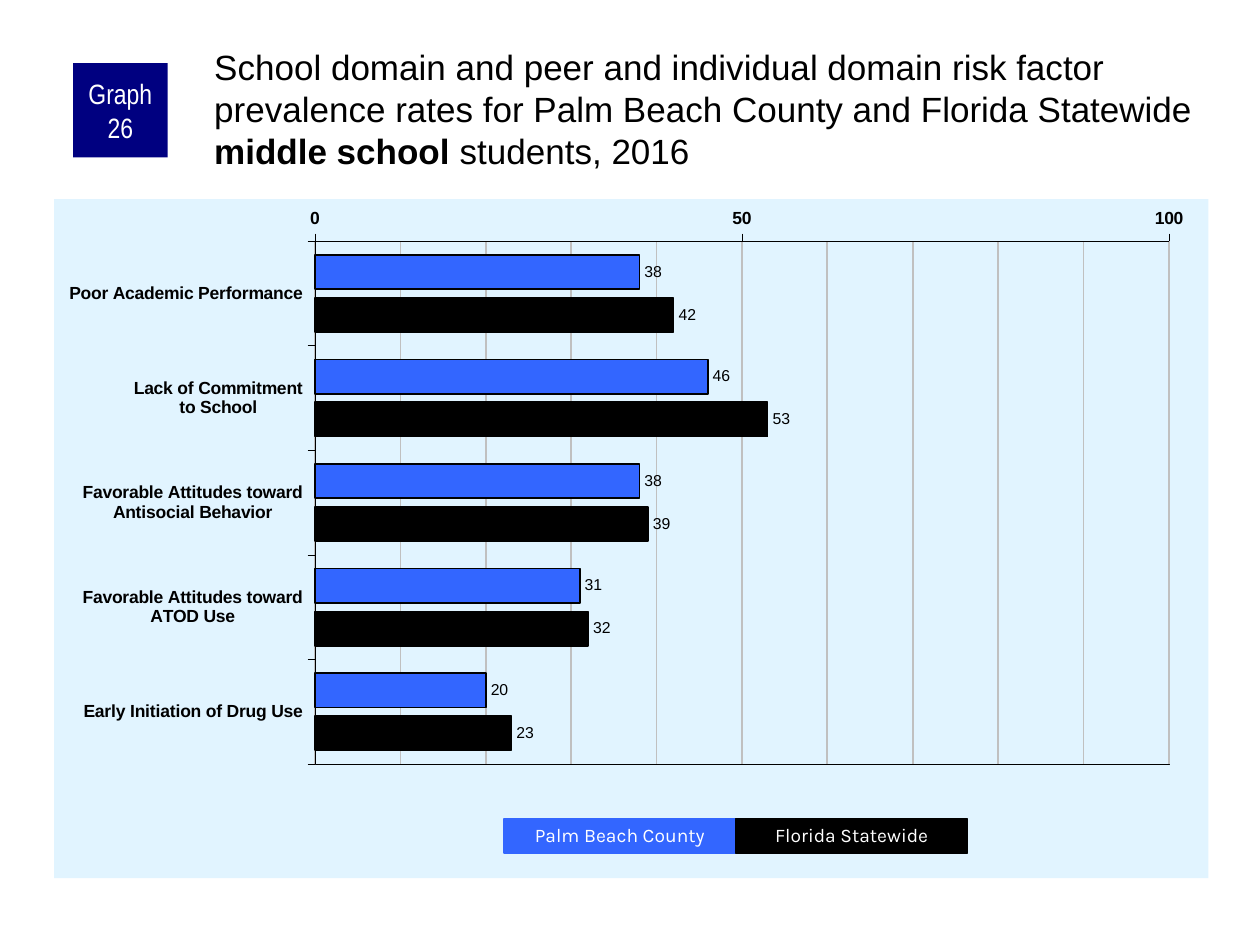
from copy import deepcopy

from lxml.etree import SubElement, fromstring
from pptx import Presentation
from pptx.chart.data import CategoryChartData
from pptx.dml.color import RGBColor
from pptx.enum.chart import XL_AXIS_CROSSES, XL_CHART_TYPE, XL_LABEL_POSITION, XL_TICK_MARK
from pptx.enum.shapes import MSO_SHAPE
from pptx.enum.text import MSO_ANCHOR, MSO_AUTO_SIZE, PP_ALIGN
from pptx.oxml.ns import nsdecls, qn
from pptx.util import Inches, Pt

BLACK = RGBColor(0x00, 0x00, 0x00)
WHITE = RGBColor(0xFF, 0xFF, 0xFF)
NAVY = RGBColor(0x00, 0x00, 0x80)
BLUE = RGBColor(0x33, 0x66, 0xFF)
PALE = RGBColor(0xE1, 0xF4, 0xFF)
GRAY = RGBColor(0xC0, 0xC0, 0xC0)

RATES = [
    ("Poor Academic Performance", 38, 42),
    ("Lack of Commitment\nto School", 46, 53),
    ("Favorable Attitudes toward\nAntisocial Behavior", 38, 39),
    ("Favorable Attitudes toward\nATOD Use", 31, 32),
    ("Early Initiation of Drug Use", 20, 23),
]
GROUPS = [("Palm Beach County", BLUE), ("Florida Statewide", BLACK)]


def style(font, size, color=BLACK, bold=False, name="Arial"):
    font.size, font.bold, font.name = Pt(size), bold, name
    font.color.rgb = color


def write(frame, text, align=PP_ALIGN.LEFT, space=None, bold="", **form):
    """Fill a frame with text; the part given as bold is set in bold."""
    para = frame.paragraphs[0]
    para.alignment = align
    if space:
        para.line_spacing = space
    head, mid, tail = text.partition(bold) if bold else (text, "", "")
    for part, heavy in ((head, False), (mid, True), (tail, False)):
        if part:
            run = para.add_run()
            run.text = part
            style(run.font, bold=heavy, **form)


def margins(frame, left, top, right, bottom):
    frame.margin_left, frame.margin_top = Inches(left), Inches(top)
    frame.margin_right, frame.margin_bottom = Inches(right), Inches(bottom)


def stroke(line, color, width):
    line.color.rgb = color
    line.width = Pt(width)


class Deck:
    def __init__(self):
        self.prs = Presentation()
        self.prs.slide_width, self.prs.slide_height = Inches(10), Inches(7.5)
        self.slide = self.prs.slides.add_slide(self.prs.slide_layouts[5])

    def title(self, text, x, y, w, h, **form):
        box = self.slide.shapes.title
        box.left, box.top, box.width, box.height = map(Inches, (x, y, w, h))
        frame = box.text_frame
        frame.word_wrap = True
        frame.auto_size = MSO_AUTO_SIZE.NONE
        frame.vertical_anchor = MSO_ANCHOR.TOP
        margins(frame, 0.03, 0.03, 0, 0)
        write(frame, text, **form)

    def block(self, text, x, y, w, h, fill, pad, edge=None, **form):
        box = self.slide.shapes.add_shape(MSO_SHAPE.RECTANGLE, *map(Inches, (x, y, w, h)))
        box.shadow.inherit = False
        box.fill.solid()
        box.fill.fore_color.rgb = fill
        if edge:
            stroke(box.line, fill, edge)
        else:
            box.line.fill.background()
        frame = box.text_frame
        frame.word_wrap = True
        frame.vertical_anchor = MSO_ANCHOR.MIDDLE
        margins(frame, *pad)
        write(frame, text, align=PP_ALIGN.CENTER, color=WHITE, **form)

    def bars(self, x, y, w, h):
        data = CategoryChartData()
        names, *series = zip(*RATES)
        data.categories = names
        for num, vals in enumerate(series, 1):
            data.add_series(f"Series {num}", vals)
        chart = self.slide.shapes.add_chart(
            XL_CHART_TYPE.BAR_CLUSTERED, *map(Inches, (x, y, w, h)), data).chart
        chart.has_legend = chart.has_title = False
        style(chart.font, 11.8)

        # Bars and their values
        plot = chart.plots[0]
        plot.gap_width, plot.overlap = 80, -25
        plot.vary_by_categories = False
        for bar, (_, color) in zip(plot.series, GROUPS):
            bar.format.fill.solid()
            bar.format.fill.fore_color.rgb = color
            stroke(bar.format.line, BLACK, 1)
            tags = bar.data_labels
            tags.show_value = True
            tags.position = XL_LABEL_POSITION.OUTSIDE_END
            style(tags.font, 9)

        # Axes, with a grid line at every ten
        cat, val = chart.category_axis, chart.value_axis
        for axis in (cat, val):
            axis.major_tick_mark = XL_TICK_MARK.OUTSIDE
            axis.minor_tick_mark = XL_TICK_MARK.NONE
            style(axis.tick_labels.font, 10, bold=True)
            stroke(axis.format.line, BLACK, 0.25)
        cat.reverse_order = True
        cat.crosses = XL_AXIS_CROSSES.MAXIMUM
        val.minimum_scale, val.maximum_scale, val.major_unit = 0, 100, 50
        val.minor_unit = 10
        val.has_major_gridlines = val.has_minor_gridlines = True
        stroke(val.major_gridlines.format.line, GRAY, 1)
        self.frame(chart)

    def frame(self, chart):
        """Place the plot, outline it, match the grids and colour the ground."""
        space = chart.element
        area = space.find(f"{qn('c:chart')}/{qn('c:plotArea')}")
        axis = area.find(qn("c:valAx"))
        look = axis.find(f"{qn('c:majorGridlines')}/{qn('c:spPr')}")
        axis.find(qn("c:minorGridlines")).append(deepcopy(look))
        old = area.find(qn("c:layout"))
        if old is not None:
            area.remove(old)
        layout = fromstring(f"<c:layout {nsdecls('c')}/>")
        area.insert(0, layout)
        spot = SubElement(layout, qn("c:manualLayout"))
        for tag, val in (("layoutTarget", "inner"), ("xMode", "edge"), ("yMode", "edge"),
                         ("x", 0.226), ("y", 0.062), ("w", 0.74), ("h", 0.77)):
            SubElement(spot, qn(f"c:{tag}")).set("val", str(val))
        ns = nsdecls("c", "a")
        area.append(fromstring(
            f'<c:spPr {ns}><a:noFill/><a:ln w="3175"><a:solidFill>'
            f'<a:srgbClr val="{BLACK}"/></a:solidFill></a:ln></c:spPr>'))
        space.find(qn("c:chart")).addnext(fromstring(
            f'<c:spPr {ns}><a:solidFill><a:srgbClr val="{PALE}"/></a:solidFill>'
            f'<a:ln><a:noFill/></a:ln></c:spPr>'))


def main():
    deck = Deck()
    deck.bars(0.43, 1.58, 9.16, 5.39)

    # Heading
    deck.block("Graph 26", 0.58, 0.5, 0.75, 0.75, NAVY, (0.05, 0, 0.05, 0),
               size=16, name="Arial Narrow")
    deck.title("School domain and peer and individual domain risk factor prevalence rates "
               "for Palm Beach County and Florida Statewide middle school students, 2016",
               1.67, 0.33, 7.92, 0.83, size=20, bold="middle school")

    # Legend
    wide = 1.84
    for num, (text, color) in enumerate(GROUPS):
        deck.block(text, 4 + num * wide, 6.5, wide, 0.27, color, (0.1, 0.05, 0.1, 0.05),
                   edge=0.75, size=11, name="Karla", space=0.9)

    deck.prs.save("out.pptx")


if __name__ == "__main__":
    main()
